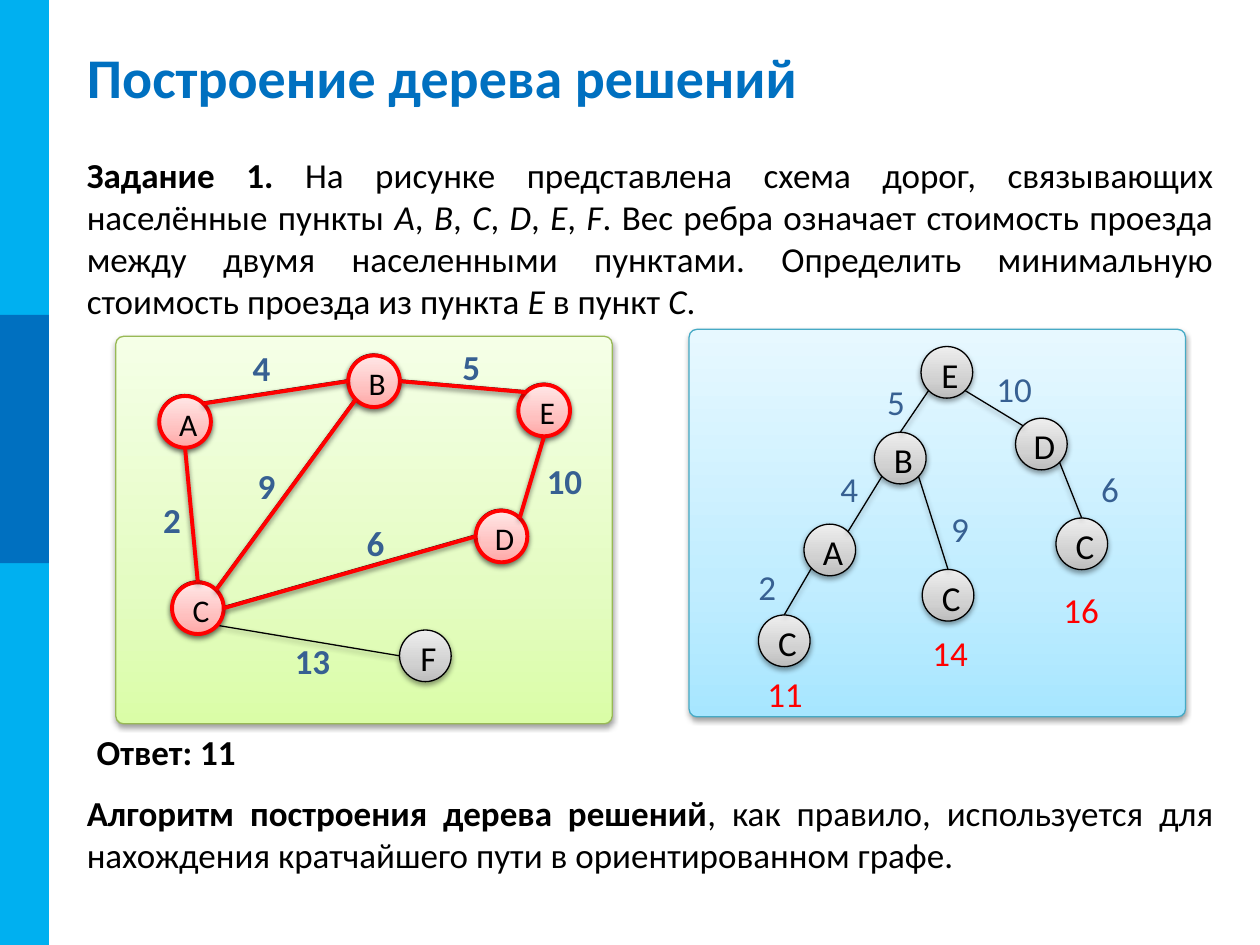
from dataclasses import dataclass
from math import sqrt
from typing import NamedTuple

from lxml import etree
from pptx import Presentation
from pptx.dml.color import RGBColor
from pptx.enum.shapes import MSO_CONNECTOR, MSO_SHAPE
from pptx.enum.text import MSO_ANCHOR, PP_ALIGN
from pptx.oxml.ns import qn
from pptx.util import Pt

LEFT, CENTER, JUSTIFY = PP_ALIGN.LEFT, PP_ALIGN.CENTER, PP_ALIGN.JUSTIFY
MIDDLE, TOP = MSO_ANCHOR.MIDDLE, MSO_ANCHOR.TOP
OVAL, RECTANGLE, ROUNDED = MSO_SHAPE.OVAL, MSO_SHAPE.RECTANGLE, MSO_SHAPE.ROUNDED_RECTANGLE
STRAIGHT = MSO_CONNECTOR.STRAIGHT


class Look(NamedTuple):
    gradient: tuple[str, str, str]  # bottom to top
    line: str
    weight: float = 0.75
    text_size: int = 20


@dataclass(frozen=True)
class Theme:
    font: str = "Calibri"
    title_size: int = 32
    text_size: int = 20
    black: str = "000000"
    stripe: str = "00B0F0"
    accent: str = "0070C0"
    weight: str = "376092"
    total: str = "FF0000"
    plain: Look = Look(("BDBDBD", "D1D1D1", "EEEEEE"), "000000")
    marked: Look = Look(("FFA6A5", "FFC0BF", "FFE7E7"), "FF0000", 2.25, 18)
    green: Look = Look(("DAFDA7", "E4FCC2", "F5FFE7"), "98B955")
    blue: Look = Look(("A7E6FF", "C1EDFF", "E7F8FF"), "46AAC5")


class Node(NamedTuple):
    letter: str
    left: float
    top: float


class Edge(NamedTuple):
    start: str
    start_side: str
    end: str
    end_side: str


class Label(NamedTuple):
    text: str
    x: float
    y: float


class Run(NamedTuple):
    text: str
    bold: bool = False
    italic: bool = False


THEME = Theme()
NODE_SIZE = 29.5
DIAGONAL = sqrt(0.5)
SIDES = {
    "top": (0, -1), "bottom": (0, 1), "left": (-1, 0), "right": (1, 0),
    "top left": (-DIAGONAL, -DIAGONAL), "top right": (DIAGONAL, -DIAGONAL),
    "bottom left": (-DIAGONAL, DIAGONAL), "bottom right": (DIAGONAL, DIAGONAL),
}

ROAD_NODES = {
    "A": Node("A", 90.7, 225.5), "B": Node("B", 198.7, 202.3),
    "C": Node("C", 98, 332), "D": Node("D", 271.5, 291),
    "E": Node("E", 295.9, 219), "F": Node("F", 228.3, 360),
}
MARKED_EDGES = [
    Edge("C", "top", "A", "bottom"), Edge("E", "bottom", "D", "top right"),
    Edge("D", "left", "C", "right"), Edge("E", "top left", "B", "right"),
    Edge("B", "bottom left", "C", "top right"), Edge("A", "top right", "B", "left"),
]
ROAD_EDGES = [*MARKED_EDGES, Edge("C", "bottom right", "F", "left")]
ROAD_WEIGHTS = [
    Label("9", 152.3, 277.6), Label("13", 178.6, 377.6), Label("4", 149.4, 210),
    Label("2", 98.3, 297), Label("6", 214.6, 310), Label("5", 269.3, 209.3),
    Label("10", 322.6, 274.7),
]
TREE_NODES = {
    "E": Node("E", 526.3, 198), "B": Node("B", 499.7, 247), "D": Node("D", 580.3, 239),
    "A": Node("A", 459.4, 299.5), "C after B": Node("C", 527, 325.4),
    "C after D": Node("С", 603.4, 296), "C after A": Node("C", 433.4, 351.4),
}
TREE_EDGES = [
    Edge("E", "bottom left", "B", "top"), Edge("E", "bottom right", "D", "top left"),
    Edge("B", "bottom left", "A", "top right"), Edge("B", "bottom right", "C after B", "top"),
    Edge("A", "bottom left", "C after A", "top"), Edge("D", "bottom right", "C after D", "top"),
]
TREE_WEIGHTS = [
    Label("5", 512, 229.3), Label("10", 579.6, 222), Label("6", 634.3, 279),
    Label("9", 548.6, 302), Label("4", 485.3, 279), Label("2", 438.5, 335.2),
]
TREE_TOTALS = [Label("16", 617.8, 348), Label("14", 543, 372.6), Label("11", 448.6, 396.4)]


def style_paragraph(paragraph, size: float, color: str, alignment, bold=None) -> None:
    paragraph.alignment = alignment
    font = paragraph.font
    font.name, font.size, font.bold = THEME.font, Pt(size), bold
    font.color.rgb = RGBColor.from_string(color)


def add_shadow(shape) -> None:
    effects = etree.SubElement(shape._element.spPr, qn("a:effectLst"))
    shadow = etree.SubElement(effects, qn("a:outerShdw"), blurRad=str(Pt(3.1)),
                              dist=str(Pt(1.6)), dir="5400000", rotWithShape="0")
    color = etree.SubElement(shadow, qn("a:srgbClr"), val=THEME.black)
    etree.SubElement(color, qn("a:alpha"), val="38000")


def apply_look(shape, look: Look) -> None:
    """Give a shape its three-stop gradient, outline and soft shadow."""
    shape.fill.gradient()
    shape.fill.gradient_angle = 90
    stops = shape._element.spPr.find(f".//{qn('a:gsLst')}")
    stops.clear()
    for position, color in zip((0, 35000, 100000), look.gradient):
        stop = etree.SubElement(stops, qn("a:gs"), pos=str(position))
        etree.SubElement(stop, qn("a:srgbClr"), val=color)
    shape.line.color.rgb = RGBColor.from_string(look.line)
    shape.line.width = Pt(look.weight)
    add_shadow(shape)


def add_stripe(slide, top: float, height: float, color: str) -> None:
    stripe = slide.shapes.add_shape(RECTANGLE, 0, Pt(top), Pt(28), Pt(height))
    stripe.shadow.inherit = False
    stripe.fill.solid()
    stripe.fill.fore_color.rgb = RGBColor.from_string(color)
    stripe.line.fill.background()


def add_panel(slide, left: float, top: float, look: Look) -> None:
    panel = slide.shapes.add_shape(ROUNDED, Pt(left), Pt(top), Pt(283.7), Pt(221.4))
    panel.adjustments[0] = 0.02
    apply_look(panel, look)


def add_node(slide, node: Node, look: Look) -> None:
    circle = slide.shapes.add_shape(OVAL, Pt(node.left), Pt(node.top), Pt(NODE_SIZE), Pt(NODE_SIZE))
    apply_look(circle, look)
    frame = circle.text_frame
    frame.word_wrap, frame.vertical_anchor = False, MIDDLE
    frame.margin_left, frame.margin_top = Pt(3.6), Pt(2)
    frame.margin_right = frame.margin_bottom = 0
    frame.text = node.letter
    style_paragraph(frame.paragraphs[0], look.text_size, THEME.black, CENTER)


def side_point(node: Node, side: str) -> tuple[Pt, Pt]:
    radius = NODE_SIZE / 2
    across, down = SIDES[side]
    return Pt(node.left + radius * (1 + across)), Pt(node.top + radius * (1 + down))


def add_graph(slide, nodes: dict[str, Node], edges: list[Edge], look: Look) -> None:
    for node in nodes.values():
        add_node(slide, node, look)
    for edge in edges:
        line = slide.shapes.add_connector(
            STRAIGHT, *side_point(nodes[edge.start], edge.start_side),
            *side_point(nodes[edge.end], edge.end_side))
        line.line.color.rgb = RGBColor.from_string(look.line)
        line.line.width = Pt(look.weight)
        add_shadow(line)


def add_text(slide, left: float, top: float, width: float, height: float, runs: list[Run],
             color: str = THEME.black, alignment=JUSTIFY, anchor=TOP) -> None:
    frame = slide.shapes.add_textbox(Pt(left), Pt(top), Pt(width), Pt(height)).text_frame
    frame.word_wrap, frame.vertical_anchor = True, anchor
    paragraph = frame.paragraphs[0]
    style_paragraph(paragraph, THEME.text_size, color, alignment)
    for part in runs:
        run = paragraph.add_run()
        run.text, run.font.bold, run.font.italic = part


def add_labels(slide, labels: list[Label], color: str, bold: bool = False) -> None:
    for text, x, y in labels:
        add_text(slide, x - 21, y - 12, 42, 24, [Run(text, bold)], color, CENTER, MIDDLE)


def add_title(slide, text: str) -> None:
    title = slide.shapes.title
    title.left, title.top, title.width, title.height = Pt(42.5), Pt(21.6), Pt(652.3), Pt(44)
    title.text_frame.text = text
    title.text_frame.vertical_anchor = MIDDLE
    style_paragraph(title.text_frame.paragraphs[0], THEME.title_size, THEME.accent, LEFT, True)


def main() -> None:
    presentation = Presentation()
    presentation.slide_width, presentation.slide_height = Pt(720), Pt(540)
    slide = presentation.slides.add_slide(presentation.slide_layouts[5])
    add_stripe(slide, 0, 540, THEME.stripe)
    add_stripe(slide, 180, 141.8, THEME.accent)
    add_title(slide, "Построение дерева решений")

    add_panel(slide, 66.2, 192.2, THEME.green)
    add_graph(slide, ROAD_NODES, ROAD_EDGES, THEME.plain)
    add_labels(slide, ROAD_WEIGHTS, THEME.weight, bold=True)
    marked_nodes = {name: Node(name, node.left + 0.3, node.top + 0.8)
                    for name, node in ROAD_NODES.items() if name != "F"}
    add_graph(slide, marked_nodes, MARKED_EDGES, THEME.marked)

    add_panel(slide, 393.8, 188.2, THEME.blue)
    add_graph(slide, TREE_NODES, TREE_EDGES, THEME.plain)
    add_labels(slide, TREE_WEIGHTS, THEME.weight)
    add_labels(slide, TREE_TOTALS, THEME.total)

    task = [Run("Задание 1.", bold=True),
            Run(" На рисунке представлена схема дорог, связывающих населённые пункты ")]
    for letter in "ABCDE":
        task += [Run(letter, italic=True), Run(", ")]
    task += [Run("F", italic=True),
             Run(". Вес ребра означает стоимость проезда между двумя населенными пунктами. "
                 "Определить минимальную стоимость проезда из пункта "),
             Run("E ", italic=True), Run("в пункт "), Run("C", italic=True), Run(".")]
    add_text(slide, 42.5, 84.3, 658, 104.4, task)
    add_text(slide, 48.2, 414, 658, 31.7, [Run("Ответ: 11", bold=True)])
    add_text(slide, 42.5, 448.6, 658, 55.4, [
        Run("Алгоритм построения дерева решений", bold=True),
        Run(", как правило, используется для нахождения кратчайшего пути "
            "в ориентированном графе.")])
    presentation.save("out.pptx")


if __name__ == "__main__":
    main()
